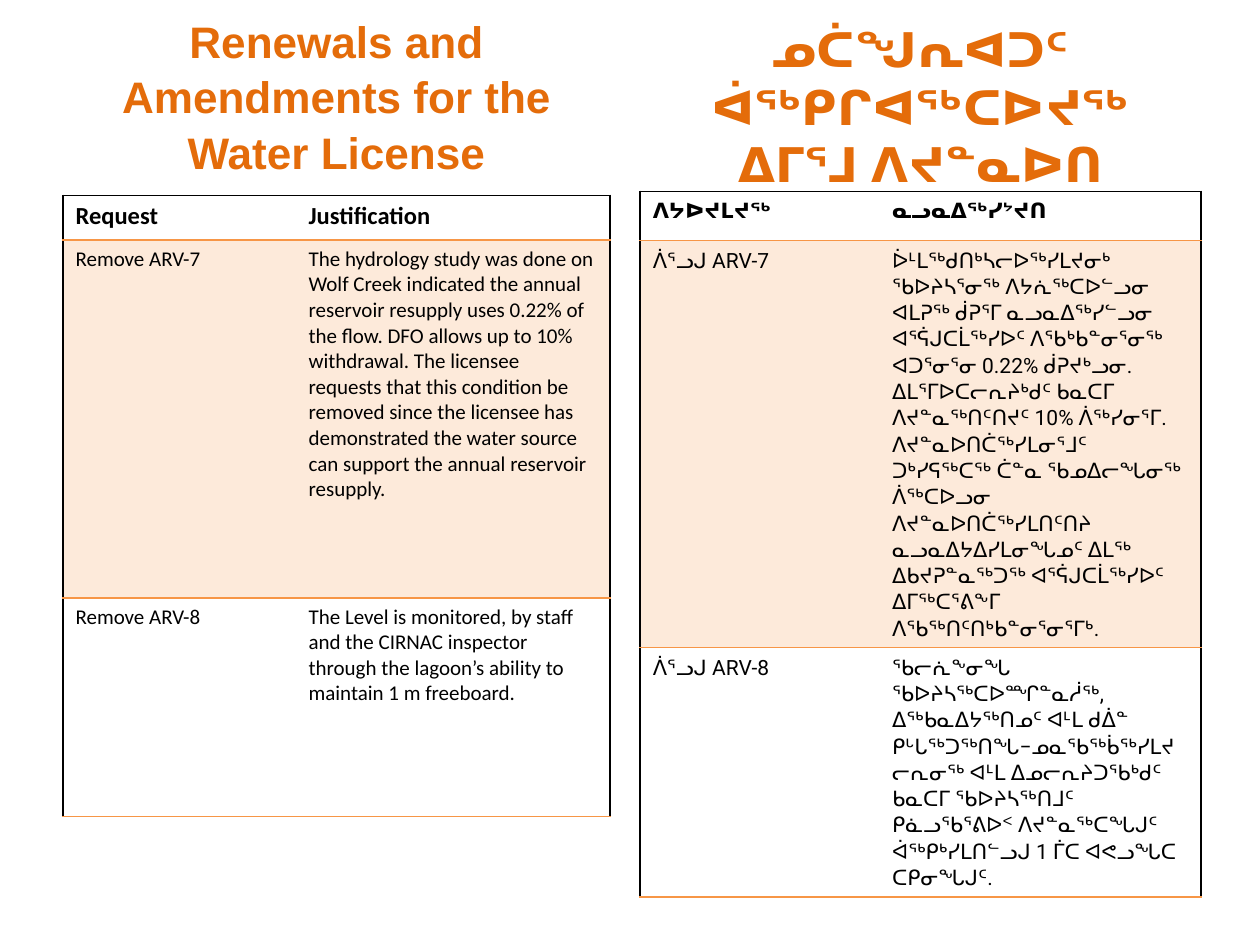
from pptx import Presentation
from pptx.dml.color import RGBColor
from pptx.enum.text import MSO_ANCHOR, MSO_AUTO_SIZE, PP_ALIGN
from pptx.oxml import parse_xml
from pptx.oxml.ns import nsdecls
from pptx.util import Pt

MIDDLE, CENTER, NO_FIT = MSO_ANCHOR.MIDDLE, PP_ALIGN.CENTER, MSO_AUTO_SIZE.NONE
TITLE_ORANGE = RGBColor(0xE4, 0x6C, 0x0A)
RULE_ORANGE = RGBColor(0xF7, 0x96, 0x46)
BAND = RGBColor(0xFD, 0xEA, 0xDA)
BLACK = RGBColor(0, 0, 0)
PLAIN_TABLE_STYLE = "{2D5ABB26-0587-4C30-8999-92F81FD0307C}"

ENGLISH = {
    "title": "Renewals and Amendments for the Water License",
    "title_box": (36, 8.6, 312.5, 91.4),
    "title_size": 25.2,
    "title_spacing": 1.05,
    "table_corner": (36, 111.6),
    "columns": (133.2, 179.3),
    "rows": (25.6, 204.5, 125),
    "font": "Calibri",
    "sizes": (14, 12, 12),
    "paragraph": {},
    "cells": [
        ("Request", "Justification"),
        ("Remove ARV-7",
         "The hydrology study was done on Wolf Creek indicated the annual reservoir "
         "resupply uses 0.22% of the flow. DFO allows up to 10% withdrawal. The licensee "
         "requests that this condition be removed since the licensee has demonstrated "
         "the water source can support the annual reservoir resupply."),
        ("Remove ARV-8",
         "The Level is monitored, by staff and the CIRNAC inspector through the lagoon’s "
         "ability to maintain 1 m freeboard."),
    ],
}
INUKTITUT = {
    "title": "ᓄᑖᖑᕆᐊᑐᑦ ᐋᖅᑭᒋᐊᖅᑕᐅᔪᖅ ᐃᒥᕐᒧ ᐱᔪᓐᓇᐅᑎ",
    "title_box": (365.8, 9.4, 320.4, 102.2),
    "title_size": 27.3,
    "title_spacing": 1.0,
    "table_corner": (365.8, 109.4),
    "columns": (136.8, 183.6),
    "rows": (28.1, 181.4, 138.2),
    "font": "Roboto",
    "sizes": (12, 12, 12),
    "paragraph": {"line_spacing": 1.07, "space_after": Pt(8)},
    "cells": [
        ("ᐱᔭᐅᔪᒪᔪᖅ", "ᓇᓗᓇᐃᖅᓯᔾᔪᑎ"),
        ("ᐲᕐᓗᒍ ARV-7",
         "ᐆᒻᒪᖅᑯᑎᒃᓴᓕᐅᖅᓯᒪᔪᓂᒃ ᖃᐅᔨᓴᕐᓂᖅ ᐱᔭᕇᖅᑕᐅᓪᓗᓂ ᐊᒪᕈᖅ ᑰᕈᕐᒥ ᓇᓗᓇᐃᖅᓯᓪᓗᓂ "
         "ᐊᕐᕌᒍᑕᒫᖅᓯᐅᑦ ᐱᖃᒃᑲᓐᓂᕐᓂᖅ ᐊᑐᕐᓂᕐᓂ 0.22% ᑰᕈᔪᒃᓗᓂ. ᐃᒪᕐᒥᐅᑕᓕᕆᔨᒃᑯᑦ ᑲᓇᑕᒥ "
         "ᐱᔪᓐᓇᖅᑎᑦᑎᔪᑦ 10% ᐲᖅᓯᓂᕐᒥ. ᐱᔪᓐᓇᐅᑎᑖᖅᓯᒪᓂᕐᒧᑦ ᑐᒃᓯᕋᖅᑕᖅ ᑖᓐᓇ ᖃᓄᐃᓕᖓᓂᖅ "
         "ᐲᖅᑕᐅᓗᓂ ᐱᔪᓐᓇᐅᑎᑖᖅᓯᒪᑎᑦᑎᔨ ᓇᓗᓇᐃᔭᐃᓯᒪᓂᖓᓄᑦ ᐃᒪᖅ ᐃᑲᔪᕈᓐᓇᖅᑐᖅ "
         "ᐊᕐᕌᒍᑕᒫᖅᓯᐅᑦ ᐃᒥᖅᑕᕐᕕᖕᒥ ᐱᖃᖅᑎᑦᑎᒃᑲᓐᓂᕐᓂᕐᒥᒃ."),
        ("ᐲᕐᓗᒍ ARV-8",
         "ᖃᓕᕇᖕᓂᖓ ᖃᐅᔨᓴᖅᑕᐅᙱᓐᓇᓲᖅ, ᐃᖅᑲᓇᐃᔭᖅᑎᓄᑦ ᐊᒻᒪ ᑯᐄᓐ "
         "ᑭᒡᒐᖅᑐᖅᑎᖓ−ᓄᓇᖃᖅᑳᖅᓯᒪᔪᓕᕆᓂᖅ ᐊᒻᒪ ᐃᓄᓕᕆᔨᑐᖃᒃᑯᑦ ᑲᓇᑕᒥ ᖃᐅᔨᓴᖅᑎᒧᑦ "
         "ᑭᓈᓗᖃᕐᕕᐅᑉ ᐱᔪᓐᓇᖅᑕᖓᒍᑦ ᐋᖅᑭᒃᓯᒪᑎᓪᓗᒍ 1 ᒦᑕ ᐊᕙᓗᖓᑕ ᑕᑭᓂᖓᒍᑦ."),
    ],
}


def apply(target, values):
    for name, value in values.items():
        setattr(target, name, value)


def write(frame, text, paragraph_format, font_format, color):
    para = frame.paragraphs[0]
    apply(para, paragraph_format)
    span = para.add_run()
    span.text = text
    apply(span.font, font_format)
    span.font.color.rgb = color


def fill_title(box, panel):
    left, top, width, height = map(Pt, panel["title_box"])
    apply(box, {"left": left, "top": top, "width": width, "height": height})
    frame = box.text_frame
    apply(frame, {"word_wrap": True, "auto_size": NO_FIT, "vertical_anchor": MIDDLE})
    write(frame, panel["title"],
          {"alignment": CENTER, "line_spacing": panel["title_spacing"]},
          {"size": Pt(panel["title_size"]), "name": "Arial", "bold": True},
          TITLE_ORANGE)


def set_borders(cell, borders):
    """Add one-point lines; borders maps side letters to colours, in L, R, T, B order."""
    properties = cell._tc.get_or_add_tcPr()
    for position, (side, color) in enumerate(borders.items()):
        properties.insert(position, parse_xml(
            f'<a:ln{side} {nsdecls("a")} w="12700"><a:solidFill>'
            f'<a:srgbClr val="{color}"/></a:solidFill></a:ln{side}>'))


def add_panel_table(page, panel):
    left, top = panel["table_corner"]
    columns, rows = panel["columns"], panel["rows"]
    frame = page.shapes.add_table(len(rows), len(columns), Pt(left), Pt(top),
                                  Pt(sum(columns)), Pt(sum(rows)))
    table = frame.table
    table._tbl.tblPr.find("{*}tableStyleId").text = PLAIN_TABLE_STYLE
    for column, width in zip(table.columns, columns):
        column.width = Pt(width)
    for row, height in zip(table.rows, rows):
        row.height = Pt(height)
    last = len(rows) - 1
    for r, texts in enumerate(panel["cells"]):
        for c, text in enumerate(texts):
            cell = table.cell(r, c)
            if r == 1:
                cell.fill.solid()
                cell.fill.fore_color.rgb = BAND
            else:
                cell.fill.background()
            write(cell.text_frame, text, panel["paragraph"],
                  {"size": Pt(panel["sizes"][r]), "name": panel["font"], "bold": r == 0},
                  BLACK)
            borders = {"L" if c == 0 else "R": BLACK}
            if r < 2:
                borders["T"] = BLACK if r == 0 else RULE_ORANGE
            if r in (0, last):
                borders["B"] = RULE_ORANGE
            set_borders(cell, borders)


def main():
    deck = Presentation()
    deck.slide_width, deck.slide_height = Pt(720), Pt(540)
    page = deck.slides.add_slide(deck.slide_layouts[5])
    fill_title(page.shapes.title, ENGLISH)
    fill_title(page.shapes.add_textbox(0, 0, 0, 0), INUKTITUT)
    for panel in (INUKTITUT, ENGLISH):
        add_panel_table(page, panel)
    deck.save("out.pptx")


if __name__ == "__main__":
    main()
